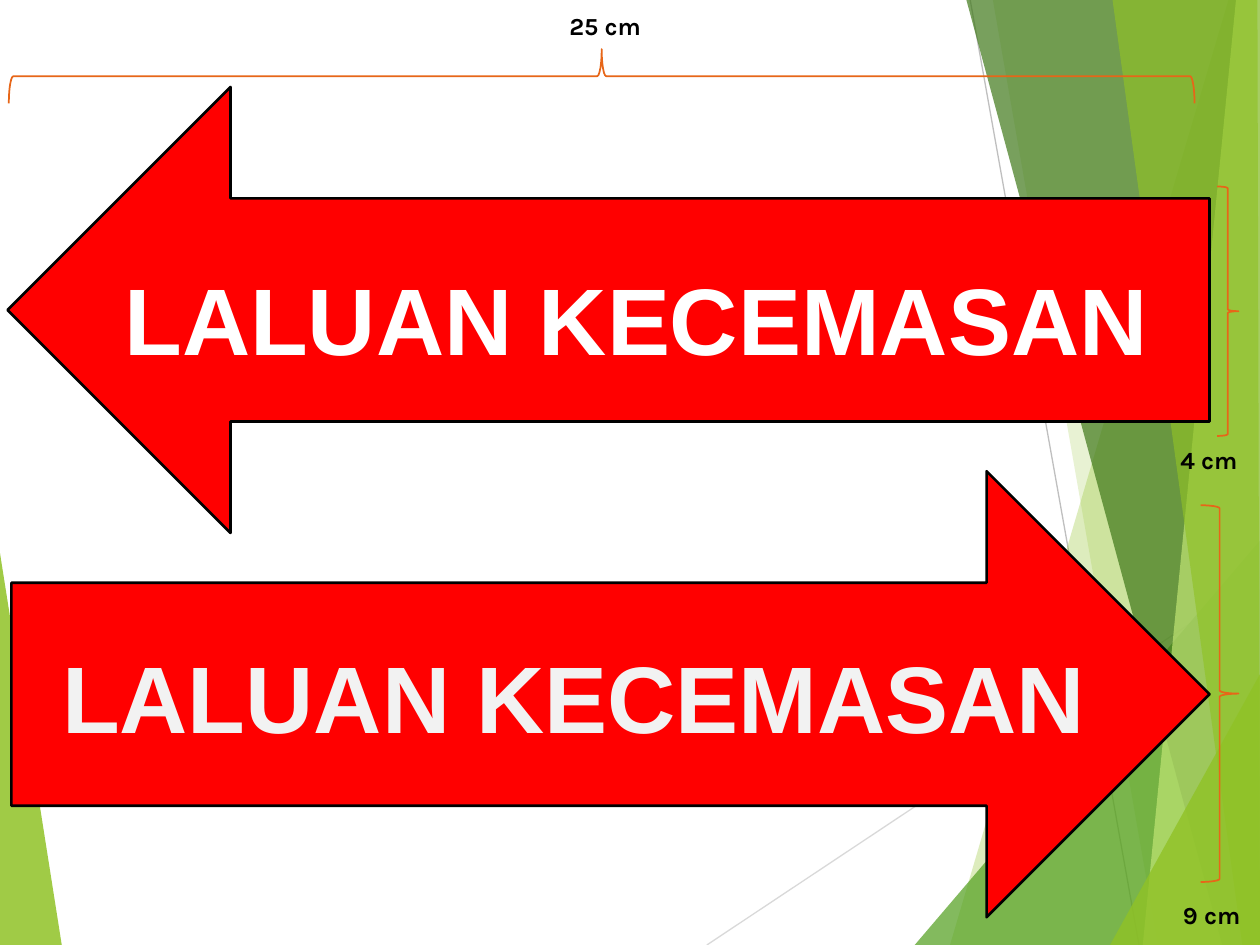
from lxml.etree import SubElement
from pptx import Presentation
from pptx.dml.color import RGBColor
from pptx.enum.shapes import MSO_CONNECTOR, MSO_SHAPE
from pptx.enum.text import MSO_ANCHOR, PP_ALIGN
from pptx.oxml.ns import qn
from pptx.util import Inches, Pt

theme = {
    "sign": "FF0000", "edge": "000000", "brace": "E76618", "ink": "000000",
    "lime": "90C226", "leaf": "54A021", "moss": "3F7819", "pale": "C0E474",
    "light": "D9D9D9", "grey": "BFBFBF", "white": "FFFFFF", "smoke": "F2F2F2",
    "big": 54, "small": 14, "head": "Arial", "note": "Karla",
}

deck = Presentation()
deck.slide_width, deck.slide_height = Inches(10), Inches(7.5)
cell = deck.slide_width // 100
slide = deck.slides.add_slide(deck.slide_layouts[6])
shapes = slide.shapes


def grid(*cells):
    return [round(n * cell) for n in cells]


def write(text, box, face, size, tint, align, anchor):
    label = shapes.add_textbox(*grid(*box))
    frame = label.text_frame
    frame.word_wrap = True
    frame.vertical_anchor = anchor
    frame.text = text
    line = frame.paragraphs[0]
    line.alignment = align
    font = line.runs[0].font
    font.name, font.size, font.bold = theme[face], Pt(theme[size]), True
    font.color.rgb = RGBColor.from_string(theme[tint])


rays = [
    ((56.1, 75, 100, 45.8), "light"),
    ((77, 0, 90.4, 75), "grey"),
]
facets = [
    ("lime", 85, [(0, 43.9), (4.9, 75), (0, 75)]),
    ("lime", 30, [(97.5, 0), (75.4, 75), (100, 75), (100, 0)]),
    ("lime", 20, [(78.8, 0), (91.9, 75), (100, 75), (100, 0)]),
    ("leaf", 72, [(72.6, 75), (100, 42.9), (100, 75)]),
    ("moss", 70, [(76.7, 0), (97, 75), (100, 75), (100, 0)]),
    ("pale", 70, [(98.1, 0), (90.7, 75), (100, 75), (100, 0)]),
    ("lime", 65, [(88.3, 0), (98.6, 75), (100, 75), (99.8, 0)]),
    ("lime", 80, [(88.1, 75), (100, 53.5), (100, 75)]),
]
for step, (tint, share, points) in enumerate(facets):
    if step == 1:
        for ends, shade in rays:
            ray = shapes.add_connector(MSO_CONNECTOR.STRAIGHT, *grid(*ends))
            ray.line.color.rgb = RGBColor.from_string(theme[shade])
            ray.line.width = Pt(0.75)
            SubElement(ray._element.spPr, qn("a:effectLst"))
    pen = shapes.build_freeform(*grid(*points[0]))
    pen.add_line_segments([grid(*p) for p in points[1:]], close=True)
    facet = pen.convert_to_shape()
    facet.shadow.inherit = False
    facet.line.fill.background()
    facet.fill.solid()
    facet.fill.fore_color.rgb = RGBColor.from_string(theme[tint])
    color = facet._element.spPr.find(qn("a:solidFill"))[0]
    SubElement(color, qn("a:alpha")).set("val", str(share * 1000))

signs = [
    (MSO_SHAPE.RIGHT_ARROW, (0.9, 37.4, 95.1, 35.4), (-2.4, 50.2, 95.9, 10), "smoke"),
    (MSO_SHAPE.LEFT_ARROW, (0.6, 6.9, 95.4, 35.4), (2.8, 19.6, 95.4, 11.3), "white"),
]
for kind, box, area, tint in signs:
    arrow = shapes.add_shape(kind, *grid(*box))
    arrow.shadow.inherit = False
    arrow.fill.solid()
    arrow.fill.fore_color.rgb = RGBColor.from_string(theme["sign"])
    arrow.line.color.rgb = RGBColor.from_string(theme["edge"])
    arrow.line.width = Pt(1.5)
    write("LALUAN KECEMASAN", area, "head", "big", tint,
          PP_ALIGN.CENTER, MSO_ANCHOR.MIDDLE)

sizes = [
    ("9 cm", MSO_SHAPE.RIGHT_BRACE, 0, (95.3, 40.1, 3, 29.9), (92.9, 70.9, 8.2, 3.4)),
    ("25 cm", MSO_SHAPE.LEFT_BRACE, 90, (45.6, -41, 4.3, 94.1), (44.2, 0.4, 9.5, 3.4)),
    ("4 cm", MSO_SHAPE.RIGHT_BRACE, 0, (96.6, 14.8, 1.7, 19.8), (92.7, 34.8, 8.2, 3.4)),
]
for text, kind, turn, box, area in sizes:
    brace = shapes.add_shape(kind, *grid(*box))
    brace.rotation = turn
    brace.shadow.inherit = False
    brace.fill.background()
    brace.line.color.rgb = RGBColor.from_string(theme["brace"])
    brace.line.width = Pt(1)
    write(text, area, "note", "small", "ink", PP_ALIGN.LEFT, MSO_ANCHOR.TOP)

deck.save("out.pptx")
